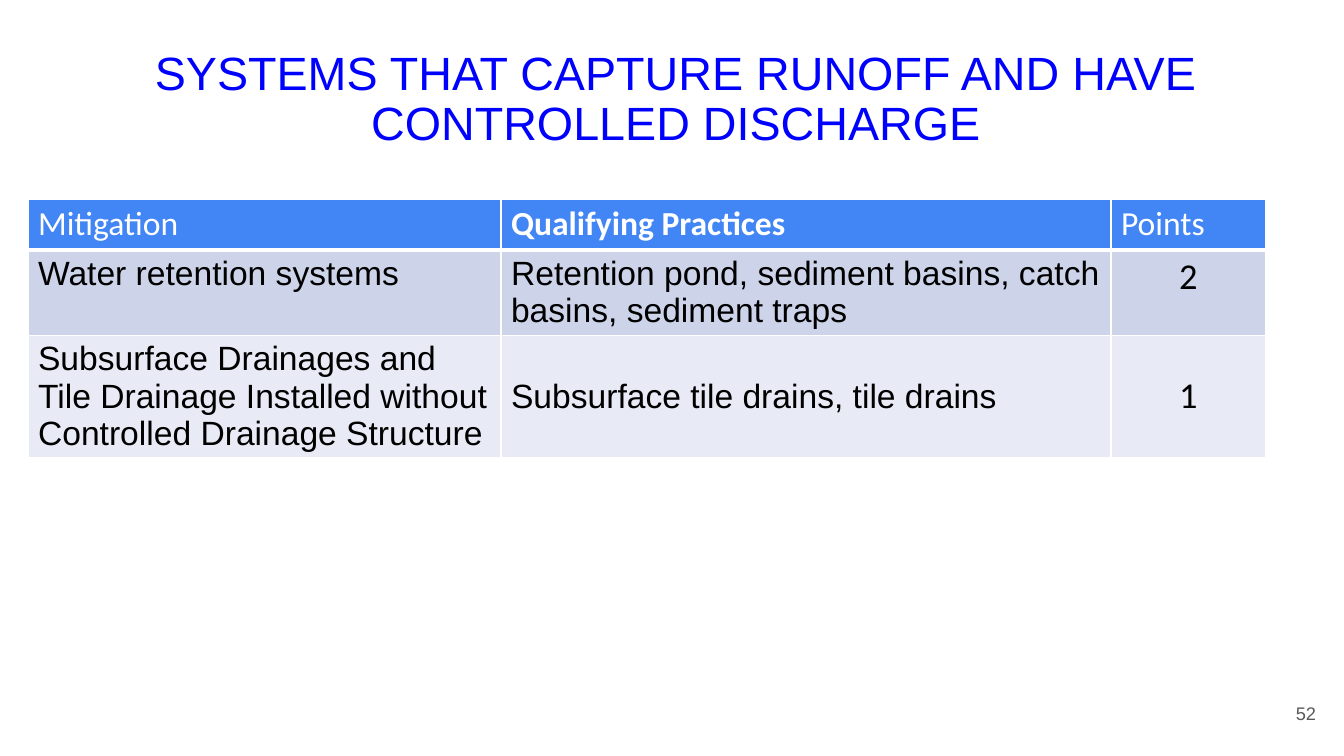
import pptx
import pptx.dml.color
import pptx.enum.text
import pptx.oxml.ns
import pptx.util
from lxml import etree

EMU_PER_PX = 914400 / 100.8
COLORS = {
    "title": "0000FF",
    "header": "4285F4",
    "odd row": "CDD4EA",
    "even row": "E8EBF5",
    "white": "FFFFFF",
    "black": "000000",
    "page number": "595959",
}
ALIGN = pptx.enum.text.PP_ALIGN
ANCHOR = pptx.enum.text.MSO_ANCHOR

COLUMN_WIDTHS = [473, 610, 155]
ROW_HEIGHTS = [50, 85, 122]
ROW_FILLS = ["header", "odd row", "even row"]
ROWS = [
    ["Mitigation", "Qualifying Practices", "Points"],
    ["Water retention systems",
     "Retention pond, sediment basins, catch basins, sediment traps", "2"],
    ["Subsurface Drainages and Tile Drainage Installed without "
     "Controlled Drainage Structure",
     "Subsurface tile drains, tile drains", "1"],
]


def px(length):
    return pptx.util.Emu(round(length * EMU_PER_PX))


def rgb(name):
    return pptx.dml.color.RGBColor.from_string(COLORS[name])


def format_text(frame, text, size, color, align, font="Arial", bold=False):
    frame.text = text
    frame.word_wrap = True
    paragraph = frame.paragraphs[0]
    paragraph.alignment = align
    paragraph.font.name = font
    paragraph.font.size = pptx.util.Pt(size)
    paragraph.font.bold = bold
    paragraph.font.color.rgb = rgb(color)
    return paragraph


def add_title(slide, text, left, top, width, height):
    title = slide.shapes.title
    title.left, title.top = px(left), px(top)
    title.width, title.height = px(width), px(height)
    title.text_frame.vertical_anchor = ANCHOR.MIDDLE
    paragraph = format_text(title.text_frame, text, 33.3, "title", ALIGN.CENTER)
    paragraph.line_spacing = 0.9


def set_borders(cell, widths):
    """Draw white borders; widths maps each side (L, R, T, B) to points."""
    properties = cell._tc.get_or_add_tcPr()
    qn = pptx.oxml.ns.qn
    for side, width in widths.items():
        line = etree.SubElement(properties, qn(f"a:ln{side}"),
                                w=str(pptx.util.Pt(width)))
        fill = etree.SubElement(line, qn("a:solidFill"))
        etree.SubElement(fill, qn("a:srgbClr"), val=COLORS["white"])


def format_cell(cell, text, row, column):
    is_header = row == 0
    is_points = column == 2 and not is_header
    set_borders(cell, {"L": 1, "R": 1, "T": 3 if row == 1 else 1,
                       "B": 3 if is_header else 1})
    cell.fill.solid()
    cell.fill.fore_color.rgb = rgb(ROW_FILLS[row])
    if row == 2 and column > 0:
        cell.vertical_anchor = ANCHOR.MIDDLE
    format_text(
        cell.text_frame, text,
        size=26 if is_points else 24,
        color="white" if is_header else "black",
        align=ALIGN.CENTER if is_points else ALIGN.LEFT,
        font="Calibri" if is_header or is_points else "Arial",
        bold=is_header and column == 1)


def add_practice_table(slide, left, top):
    frame = slide.shapes.add_table(
        len(ROWS), len(COLUMN_WIDTHS), px(left), px(top),
        px(sum(COLUMN_WIDTHS)), px(sum(ROW_HEIGHTS)))
    table = frame.table
    for column, width in zip(table.columns, COLUMN_WIDTHS):
        column.width = px(width)
    for row, height in zip(table.rows, ROW_HEIGHTS):
        row.height = px(height)
    for row, texts in enumerate(ROWS):
        for column, text in enumerate(texts):
            format_cell(table.cell(row, column), text, row, column)


def add_page_number(slide, text, left, top, width, height):
    box = slide.shapes.add_textbox(px(left), px(top), px(width), px(height))
    box.text_frame.vertical_anchor = ANCHOR.MIDDLE
    format_text(box.text_frame, text, 13, "page number", ALIGN.RIGHT)


def main():
    presentation = pptx.Presentation()
    presentation.slide_width, presentation.slide_height = px(1344), px(756)
    slide = presentation.slides.add_slide(presentation.slide_layouts[5])
    add_title(slide, "SYSTEMS THAT CAPTURE RUNOFF AND HAVE CONTROLLED DISCHARGE",
              105, 43, 1142, 115)
    add_practice_table(slide, 28, 199)
    add_page_number(slide, "52", 1245, 685, 81, 57)
    presentation.save("out.pptx")


if __name__ == "__main__":
    main()
